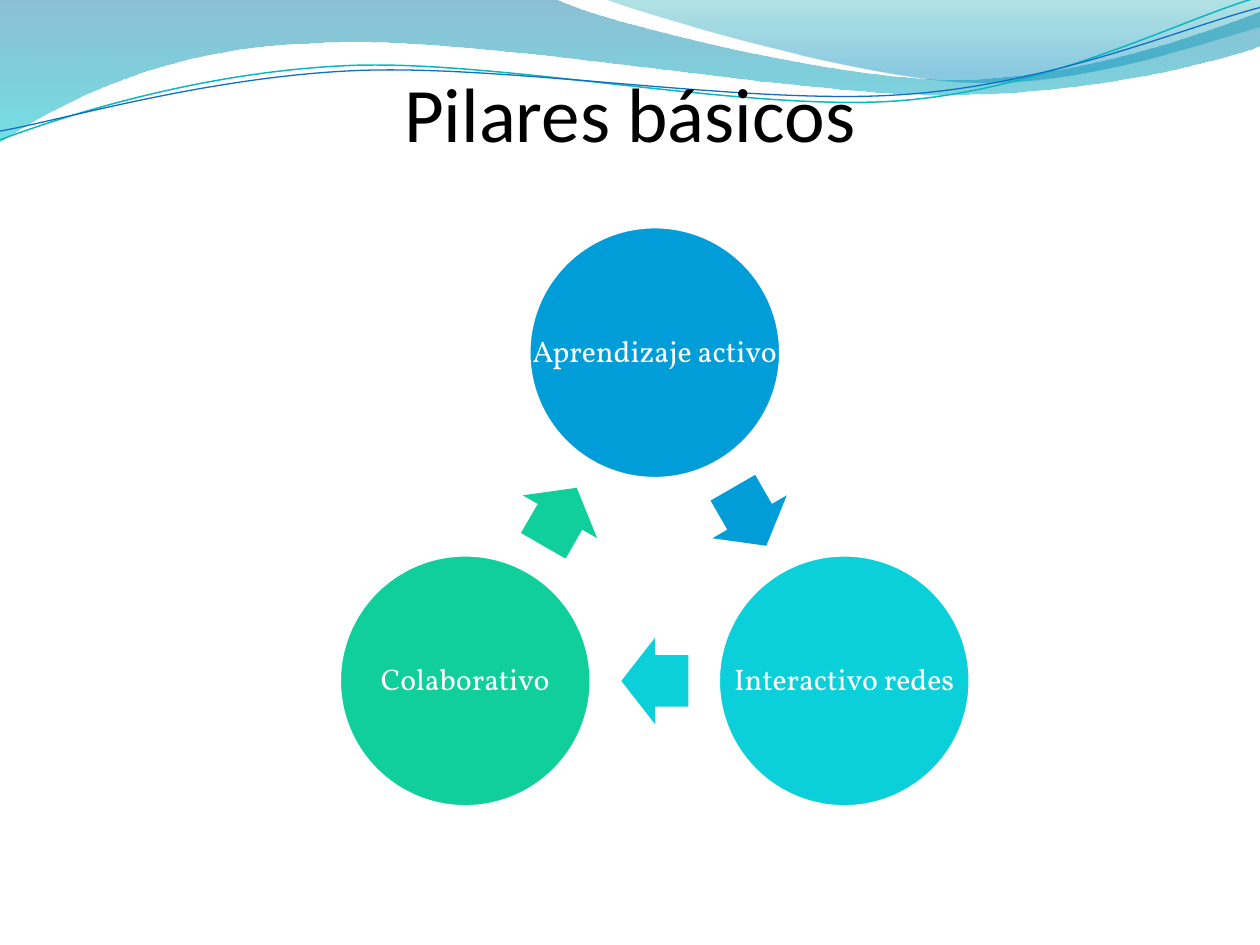
from math import cos, radians, sin, sqrt

from lxml import etree
from pptx import Presentation
from pptx.dml.color import RGBColor
from pptx.enum.shapes import MSO_SHAPE
from pptx.enum.text import MSO_ANCHOR, PP_ALIGN
from pptx.oxml.ns import qn
from pptx.util import Cm, Pt

ELLIPSE = MSO_SHAPE.OVAL
ARROW = MSO_SHAPE.RIGHT_ARROW
CENTER = PP_ALIGN.CENTER
MIDDLE = MSO_ANCHOR.MIDDLE
TOP = MSO_ANCHOR.TOP

PILLARS = [
    ("Aprendizaje activo", "009DD9"),
    ("Interactivo redes", "0BD0D9"),
    ("Colaborativo", "10CF9B"),
]

BANDS = [
    {
        "segments": "LCCLCCCL",
        "points": [
            (0, 0), (440, -1),
            (476, 17), (664, 63), (758, 63),
            (853, 63), (958, 26), (1000, 9),
            (1001, 36),
            (983, 44), (870, 76), (746, 75),
            (622, 75), (382, 28), (257, 34),
            (129, 36), (46, 83), (-1, 113),
            (0, 0),
        ],
        "stops": [(0, "0074A1", 45), (1, "00C6CF", 55)],
    },
    {
        "segments": "CCLL",
        "points": [
            (479, -1),
            (509, 11), (682, 62), (769, 65),
            (856, 69), (961, 32), (1000, 21),
            (1000, 0), (479, -1),
        ],
        "stops": [(0, "00A1A9", 30), (0.8, "008BBF", 45)],
    },
]

STRANDS = [
    {
        "points": [
            (0, 111),
            (48, 93), (158, 57), (277, 52),
            (395, 47), (593, 89), (713, 80),
            (833, 71), (938, 15), (998, -2),
        ],
        "pivot": (499, 57.5), "color": "0AB8BF", "weight": 0.85,
    },
    {
        "points": [
            (0, 104),
            (47, 96), (164, 61), (283, 56),
            (403, 51), (597, 84), (717, 75),
            (836, 67), (941, 21), (1000, 6),
        ],
        "pivot": (499.5, 59), "color": "0F6FC6", "weight": 0.75,
    },
]
STRAND_TILT = -2.7


def rgb(value):
    return RGBColor.from_string(value)


def apply(target, values):
    for name, value in values.items():
        setattr(target, name, value)


def turn(point, pivot, degrees):
    dx, dy = point[0] - pivot[0], point[1] - pivot[1]
    c, s = cos(radians(degrees)), sin(radians(degrees))
    return pivot[0] + dx * c - dy * s, pivot[1] + dx * s + dy * c


def add_curve(slide, box, points, segments, closed):
    left, top, width = box
    unit = width / 1000
    places = [(Cm(left + x * unit), Cm(top + y * unit)) for x, y in points]
    builder = slide.shapes.build_freeform(*places[0])
    builder.add_line_segments(places[1:], close=closed)
    curve = builder.convert_to_shape()
    curve.shadow.inherit = False
    steps = iter(list(curve._element.iter(qn("a:lnTo"))))
    for segment in segments:
        step = next(steps)
        if segment == "C":
            step.tag = qn("a:cubicBezTo")
            for follower in (next(steps), next(steps)):
                step.append(follower[0])
                follower.getparent().remove(follower)
    return curve


def fill_gradient(shape, stops):
    shape.fill.gradient()
    shape.fill.gradient_angle = 270
    for stop, (position, color, _) in zip(shape.fill.gradient_stops, stops):
        stop.position = position
        stop.color.rgb = rgb(color)
    colors = shape._element.spPr.iter(qn("a:srgbClr"))
    for color, (_, _, opacity) in zip(list(colors), stops):
        etree.SubElement(color, qn("a:alpha"), val=str(opacity * 1000))


def add_waves(slide, box):
    for band in BANDS:
        wave = add_curve(slide, box, band["points"], band["segments"], True)
        fill_gradient(wave, band["stops"])
        wave.line.fill.background()
    for strand in STRANDS:
        level = [turn(p, strand["pivot"], -STRAND_TILT) for p in strand["points"]]
        wave = add_curve(slide, box, level, "CCC", False)
        wave.rotation = STRAND_TILT
        wave.fill.background()
        wave.line.color.rgb = rgb(strand["color"])
        wave.line.width = Pt(strand["weight"])


def write(shape, text, font, color, frame, paragraph):
    apply(shape.text_frame, frame)
    line = shape.text_frame.paragraphs[0]
    apply(line, {"alignment": CENTER, **paragraph})
    run = line.add_run()
    run.text = text
    apply(run.font, font)
    run.font.color.rgb = rgb(color)


def add_solid(slide, kind, center, size, color):
    left, top = (c - s / 2 for c, s in zip(center, size))
    solid = slide.shapes.add_shape(kind, Cm(left), Cm(top), *map(Cm, size))
    solid.shadow.inherit = False
    solid.fill.solid()
    solid.fill.fore_color.rgb = rgb(color)
    return solid


def add_cycle(slide, box, diameter=5.08, arrow_size=(1.35, 1.73)):
    left, top, width = box
    radius = (width - diameter) / sqrt(3)
    middle = (left + width / 2, top + diameter / 2 + radius)
    inset = Cm(0.05)
    frame = {
        "word_wrap": False, "vertical_anchor": MIDDLE,
        "margin_left": inset, "margin_right": inset,
        "margin_top": inset, "margin_bottom": inset,
    }
    for index, (label, color) in enumerate(PILLARS):
        angle = index * 120
        crown = (middle[0], middle[1] - radius)
        pillar = add_solid(slide, ELLIPSE, turn(crown, middle, angle),
                           (diameter, diameter), color)
        pillar.line.color.rgb = rgb("FFFFFF")
        pillar.line.width = Pt(2)
        write(pillar, label, {"size": Pt(17), "name": "Vollkorn"}, "FFFFFF",
              frame, {"line_spacing": 0.9})

        gap = (middle[0], middle[1] - radius / 2)
        arrow = add_solid(slide, ARROW, turn(gap, middle, angle + 60),
                          arrow_size, color)
        arrow.line.fill.background()
        arrow.rotation = angle + 60
        arrow.adjustments[0] = 0.6
        arrow.adjustments[1] = 0.5


def add_title(slide, box):
    title = slide.shapes.add_textbox(*map(Cm, box))
    write(title, "Pilares básicos", {"size": Pt(44), "name": "Calibri"}, "000000",
          {"word_wrap": True, "vertical_anchor": TOP}, {})


def main():
    deck = Presentation()
    apply(deck, {"slide_width": Cm(25.4), "slide_height": Cm(19.05)})
    slide = deck.slides.add_slide(deck.slide_layouts[6])
    add_waves(slide, (0, 0, 25.4))
    add_cycle(slide, (6.84, 4.57, 12.72))
    add_title(slide, (1.27, 1.2, 22.86, 2.74))
    deck.save("out.pptx")


if __name__ == "__main__":
    main()
